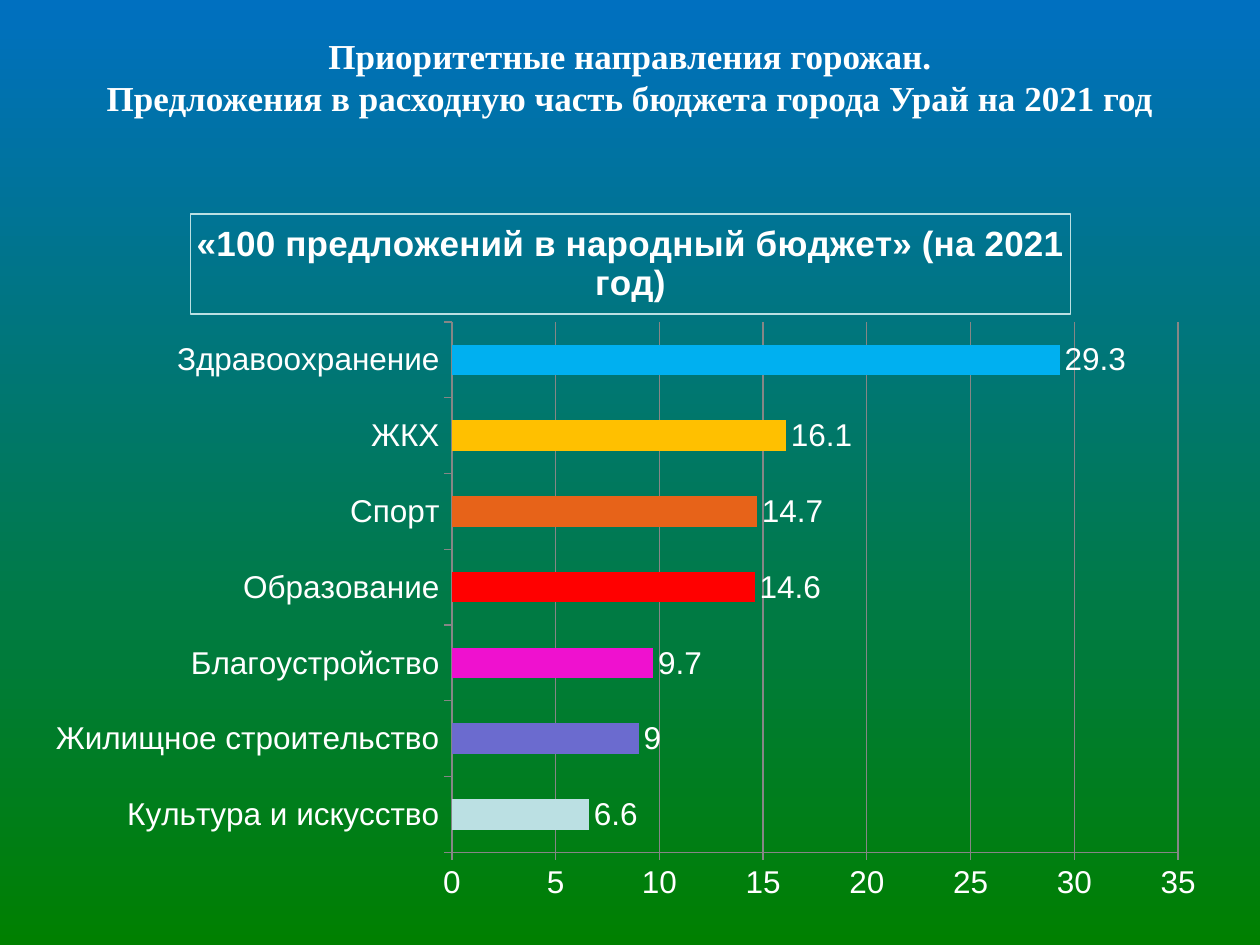
from lxml import etree
from pptx import Presentation
from pptx.chart.data import CategoryChartData
from pptx.dml.color import RGBColor
from pptx.enum.chart import XL_CHART_TYPE, XL_LABEL_POSITION, XL_TICK_MARK
from pptx.enum.text import MSO_ANCHOR, PP_ALIGN
from pptx.oxml.ns import qn
from pptx.util import Cm, Pt

BAR = XL_CHART_TYPE.BAR_CLUSTERED
OUT_END = XL_LABEL_POSITION.OUTSIDE_END
TICK_OUT = XL_TICK_MARK.OUTSIDE
MIDDLE = MSO_ANCHOR.MIDDLE
CENTER = PP_ALIGN.CENTER

COLORS = {"sky": "0070C0", "grass": "008000", "text": "FFFFFF",
          "axis": "868686", "frame": "BBE0E3"}
HEAD = ("Приоритетные направления горожан.\v"
        "Предложения в расходную часть бюджета города Урай на 2021 год")
TITLE = "«100 предложений в народный бюджет» (на 2021 год)"
VOTES = [  # area, share, bar colour, from the bottom up
    ("Культура и искусство", 6.6, "BBE0E3"),
    ("Жилищное строительство", 9, "6B6BCF"),
    ("Благоустройство", 9.7, "EF11CF"),
    ("Образование", 14.6, "FF0000"),
    ("Спорт", 14.7, "E76319"),
    ("ЖКХ", 16.1, "FFC000"),
    ("Здравоохранение", 29.3, "00B0F0"),
]
PLOT = {"x": 0.35, "y": 0.18, "w": 0.61, "h": 0.74}  # shares of the chart


def rgb(name):
    return RGBColor.from_string(COLORS.get(name, name))


def set_all(item, values):
    for key, value in values.items():
        setattr(item, key, value)


def set_font(font, size, face="Arial", bold=False):
    set_all(font, {"size": Pt(size), "name": face, "bold": bold})
    font.color.rgb = rgb("text")


def set_line(line, color, width=0.75):
    line.color.rgb = rgb(color)
    line.width = Pt(width)


def paint_back(slide):
    fill = slide.background.fill
    fill.gradient()
    fill.gradient_angle = 270
    for stop, name in zip(fill.gradient_stops, ("sky", "grass")):
        stop.color.rgb = rgb(name)


def add_head(slide, box):
    frame = slide.shapes.add_textbox(*box).text_frame
    set_all(frame, {"word_wrap": True, "vertical_anchor": MIDDLE})
    para = frame.paragraphs[0]
    para.text = HEAD
    para.alignment = CENTER
    set_font(para.font, 20, "Times New Roman", True)


def fix_plot(chart):
    """Give the inner plot area its fixed place in the chart."""
    area = chart.plots[0]._element.getparent()
    for old in area.findall(qn("c:layout")):
        area.remove(old)
    layout = etree.Element(qn("c:layout"))
    area.insert(0, layout)
    manual = etree.SubElement(layout, qn("c:manualLayout"))
    parts = {"layoutTarget": "inner", "xMode": "edge", "yMode": "edge", **PLOT}
    for tag, value in parts.items():
        etree.SubElement(manual, qn(f"c:{tag}")).set("val", str(value))


def style_axes(chart):
    for axis in (chart.category_axis, chart.value_axis):
        axis.major_tick_mark = TICK_OUT
        set_font(axis.tick_labels.font, 18)
        set_line(axis.format.line, "axis")
    set_all(chart.value_axis, {"minimum_scale": 0, "maximum_scale": 35,
                               "major_unit": 5, "has_major_gridlines": True})
    set_line(chart.value_axis.major_gridlines.format.line, "axis")


def style_bars(plot):
    set_all(plot, {"gap_width": 150, "vary_by_categories": False,
                   "has_data_labels": True})
    set_all(plot.data_labels, {"show_value": True, "position": OUT_END,
                               "number_format": "General",
                               "number_format_is_linked": False})
    set_font(plot.data_labels.font, 18)
    bars = plot.series[0]
    bars.invert_if_negative = False
    for i, (_, _, color) in enumerate(VOTES):
        fill = bars.points[i].format.fill
        fill.solid()
        fill.fore_color.rgb = rgb(color)


def add_votes(slide, box):
    data = CategoryChartData()
    names, shares, _ = zip(*VOTES)
    data.categories = names
    data.add_series("Series 1", shares)
    chart = slide.shapes.add_chart(BAR, *box, data).chart
    set_font(chart.font, 18)
    set_all(chart, {"has_legend": False, "has_title": True})
    title = chart.chart_title
    title.include_in_layout = False
    title.text_frame.text = TITLE
    set_font(title.text_frame.paragraphs[0].runs[0].font, 20, bold=True)
    set_line(title.format.line, "frame")
    fix_plot(chart)
    style_axes(chart)
    style_bars(chart.plots[0])


def main():
    deck = Presentation()
    set_all(deck, {"slide_width": Cm(25.4), "slide_height": Cm(19.05)})
    slide = deck.slides.add_slide(deck.slide_layouts[6])
    paint_back(slide)
    add_head(slide, (Cm(1.27), Cm(0.76), Cm(22.86), Cm(1.55)))
    add_votes(slide, (Cm(0.71), Cm(3.89), Cm(24), Cm(14.45)))
    deck.save("out.pptx")


if __name__ == "__main__":
    main()
